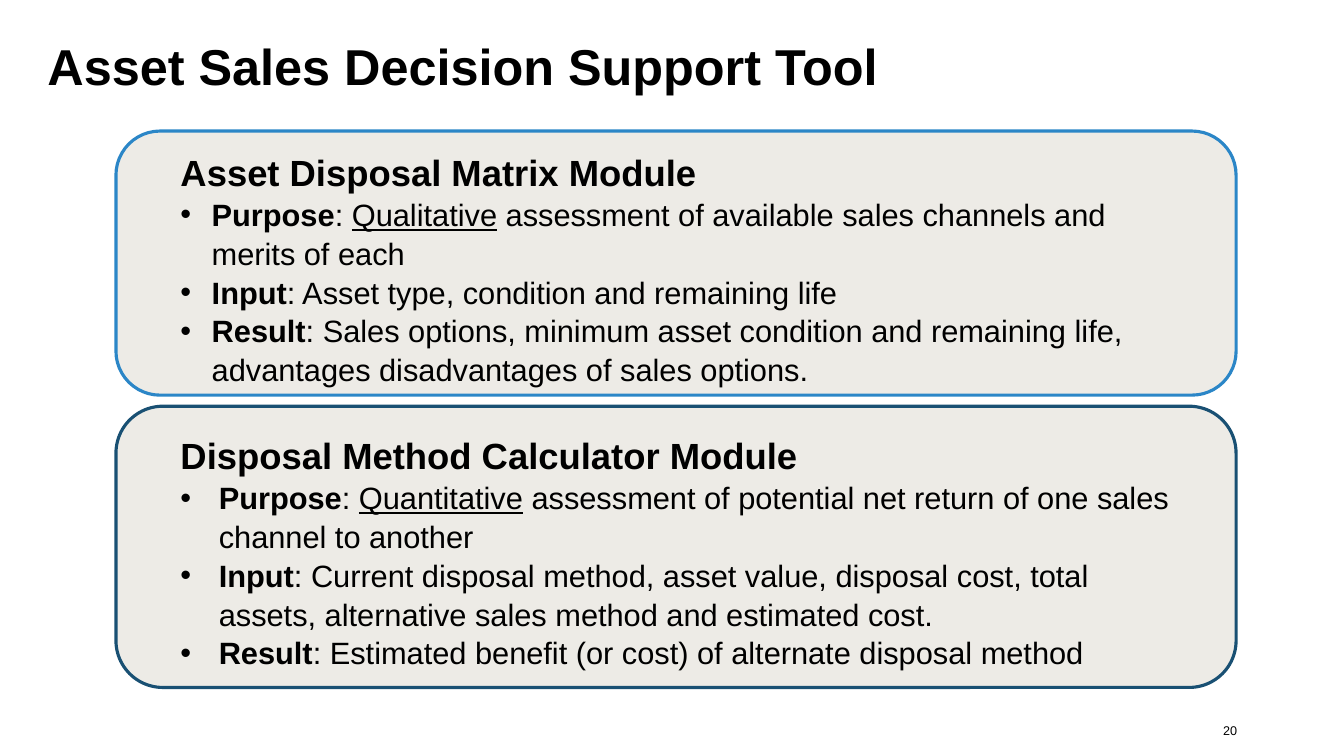
from pptx import Presentation
from pptx import util as u
from pptx.dml.color import RGBColor
from pptx.enum import shapes, text
from pptx.oxml import xmlchemy as x

TITLE = "Asset Sales Decision Support Tool"
PAGE = "20"
BLACK = RGBColor(0x00, 0x00, 0x00)
CARD = RGBColor(0xED, 0xEB, 0xE6)
BLUE = RGBColor(0x2B, 0x86, 0xC7)
NAVY = RGBColor(0x19, 0x50, 0x73)
CARD_LEFT, CARD_WIDTH = 1.15, 11.11
TEXT_LEFT = 1.69
MODULES = [
    {
        "heading": "Asset Disposal Matrix Module",
        "line": BLUE, "card": (1.3, 2.62), "text": (1.42, 10.07, 2.45), "indent": 0.31,
        "items": [
            ("Purpose", ": ", "Qualitative",
             " assessment of available sales channels and merits of each"),
            ("Input", ": Asset type, condition and remaining life"),
            ("Result", ": Sales options, minimum asset condition and remaining life, "
                       "advantages disadvantages of sales options."),
        ],
    },
    {
        "heading": "Disposal Method Calculator Module",
        "line": NAVY, "card": (4.03, 2.79), "text": (4.23, 10.12, 2.5), "indent": 0.38,
        "items": [
            ("Purpose", ": ", "Quantitative",
             " assessment of potential net return of one sales channel to another"),
            ("Input", ": Current disposal method, asset value, disposal cost, total assets, "
                      "alternative sales method and estimated cost."),
            ("Result", ": Estimated benefit (or cost) of alternate disposal method"),
        ],
    },
]


def place(sp, left, top, width, height):
    """Position a shape, in inches."""
    sp.left, sp.top, sp.width, sp.height = map(u.Inches, (left, top, width, height))


def set_frame(tf, inset_x=0, inset_y=0):
    """Give a text frame plain top-anchored wrapping."""
    tf.word_wrap = True
    tf.auto_size = text.MSO_AUTO_SIZE.NONE
    tf.vertical_anchor = text.MSO_ANCHOR.TOP
    tf.margin_left = tf.margin_right = u.Inches(inset_x)
    tf.margin_top = tf.margin_bottom = u.Inches(inset_y)


def add_run(p, words, size, bold=False, underline=False):
    """Append a formatted run."""
    r = p.add_run()
    r.text = words
    r.font.name = "Arial"
    r.font.size = u.Pt(size)
    r.font.bold = bold
    r.font.underline = underline
    r.font.color.rgb = BLACK


def format_list_paragraph(p, indent, bullet):
    """Set spacing, hanging indent and bullet."""
    p.alignment = text.PP_ALIGN.LEFT
    p.space_before = p.space_after = u.Pt(0)
    p.line_spacing = 1.05
    pPr = p._p.get_or_add_pPr()
    pPr.set("marL", str(u.Inches(indent)))
    pPr.set("indent", str(-u.Inches(indent)))
    mark = pPr.makeelement(x.qn("a:buChar" if bullet else "a:buNone"), {})
    if bullet:
        mark.set("char", "•")
    pPr.append(mark)


def add_card(s, module):
    """Draw a module's rounded card behind the text."""
    top, height = module["card"]
    sp = s.shapes.add_shape(shapes.MSO_SHAPE.ROUNDED_RECTANGLE,
                            *map(u.Inches, (CARD_LEFT, top, CARD_WIDTH, height)))
    sp.shadow.inherit = False
    sp.fill.solid()
    sp.fill.fore_color.rgb = CARD
    sp.line.color.rgb = module["line"]
    sp.line.width = u.Pt(2.25)
    s.shapes._spTree.insert(2, sp._element)


def fill_module(sp, module):
    """Write a module's heading and bullets."""
    place(sp, TEXT_LEFT, *module["text"])
    tf = sp.text_frame
    set_frame(tf, 0.1, 0.05)
    p = tf.paragraphs[0]
    format_list_paragraph(p, 0, False)
    add_run(p, module["heading"], 26, bold=True)
    for item in module["items"]:
        p = tf.add_paragraph()
        format_list_paragraph(p, module["indent"], True)
        for i, words in enumerate(item):
            add_run(p, words, 22, bold=i == 0, underline=i == 2)


def main():
    """Build the slide."""
    prs = Presentation()
    prs.slide_width, prs.slide_height = u.Inches(13.33), u.Inches(7.5)
    s = prs.slides.add_slide(prs.slide_layouts[3])

    title = s.shapes.title
    place(title, 0.47, 0.35, 12.18, 0.5)
    set_frame(title.text_frame)
    p = title.text_frame.paragraphs[0]
    p.alignment = text.PP_ALIGN.LEFT
    add_run(p, TITLE, 36, bold=True)

    for number, module in enumerate(MODULES, 1):
        add_card(s, module)
        fill_module(s.placeholders[number], module)

    sp = s.shapes.add_textbox(*map(u.Inches, (12.13, 7.17, 0.62, 0.14)))
    set_frame(sp.text_frame)
    add_run(sp.text_frame.paragraphs[0], PAGE, 9)
    prs.save("out.pptx")


if __name__ == "__main__":
    main()
